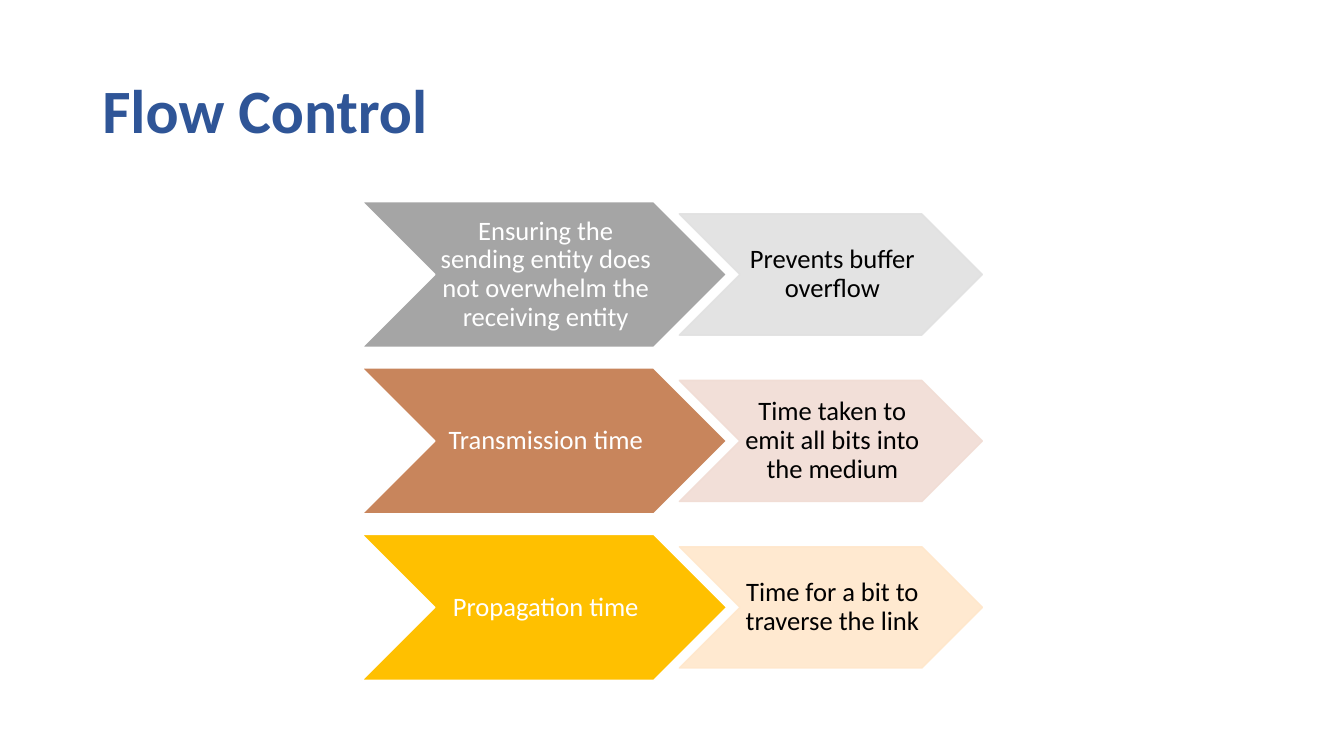
import pptx
import pptx.util
import pptx.dml.color
import pptx.enum.shapes
import pptx.enum.text
import pptx.oxml
import pptx.oxml.ns

Pt = pptx.util.Pt

TITLE = "Flow Control"
ROWS = [
    ("Ensuring the sending entity does not overwhelm the receiving entity", "Prevents buffer overflow", "gray"),
    ("Transmission time", "Time taken to emit all bits into the medium", "copper"),
    ("Propagation time", "Time for a bit to traverse the link", "gold"),
]
COLORS = {
    "title": "2F5597", "white": "FFFFFF", "black": "000000",
    "gray": "A5A5A5", "gray_pale": "E1E1E1",
    "copper": "C8855C", "copper_pale": "F1DCD4",
    "gold": "FFC000", "gold_pale": "FFE7CB",
}
FONT = "Calibri"
TOP, PITCH = 144, 118.9
TERM_LEFT, TERM_WIDTH, TERM_HEIGHT = 258.5, 260.6, 104.2
DETAIL_LEFT, DETAIL_WIDTH, DETAIL_HEIGHT = 485.3, 216.5, 86.5


def rgb(name):
    return pptx.dml.color.RGBColor.from_string(COLORS[name])


def write(shape, text, size, color, margins, alignment, bold=False):
    frame = shape.text_frame
    frame.word_wrap = True
    frame.vertical_anchor = pptx.enum.text.MSO_ANCHOR.MIDDLE
    frame.margin_left, frame.margin_top, frame.margin_right, frame.margin_bottom = map(Pt, margins)
    paragraph = frame.paragraphs[0]
    paragraph.alignment = alignment
    paragraph.line_spacing = 0.9
    run = paragraph.add_run()
    run.text = text
    run.font.name = FONT
    run.font.size = Pt(size)
    run.font.bold = bold
    run.font.color.rgb = rgb(color)


def set_opacity(shape, percent):
    for color in shape._element.spPr.iter(pptx.oxml.ns.qn("a:srgbClr")):
        alpha = pptx.oxml.parse_xml(f'<a:alpha {pptx.oxml.ns.nsdecls("a")} val="{percent * 1000}"/>')
        color.append(alpha)


def add_chevron(slide, box, text, fill, line, text_color):
    shape = slide.shapes.add_shape(pptx.enum.shapes.MSO_SHAPE.CHEVRON, *map(Pt, box))
    shape.shadow.inherit = False
    shape.fill.solid()
    shape.fill.fore_color.rgb = rgb(fill)
    shape.line.color.rgb = rgb(line)
    shape.line.width = Pt(1)
    write(shape, text, 19, text_color, (2, 1, 0, 1), pptx.enum.text.PP_ALIGN.CENTER)
    return shape


def main():
    presentation = pptx.Presentation()
    presentation.slide_width, presentation.slide_height = Pt(960), Pt(540)
    slide = presentation.slides.add_slide(presentation.slide_layouts[6])

    title = slide.shapes.add_textbox(Pt(66), Pt(28.75), Pt(828), Pt(104.4))
    write(title, TITLE, 44, "title", (7.2, 3.6, 7.2, 3.6), pptx.enum.text.PP_ALIGN.LEFT, bold=True)

    for index, (term, detail, color) in enumerate(ROWS):
        top = TOP + index * PITCH
        add_chevron(slide, (TERM_LEFT, top, TERM_WIDTH, TERM_HEIGHT), term, color, "white", "white")
        detail_top = top + (TERM_HEIGHT - DETAIL_HEIGHT) / 2
        pale = color + "_pale"
        box = (DETAIL_LEFT, detail_top, DETAIL_WIDTH, DETAIL_HEIGHT)
        set_opacity(add_chevron(slide, box, detail, pale, pale, "black"), 90)

    presentation.save("out.pptx")


if __name__ == "__main__":
    main()
